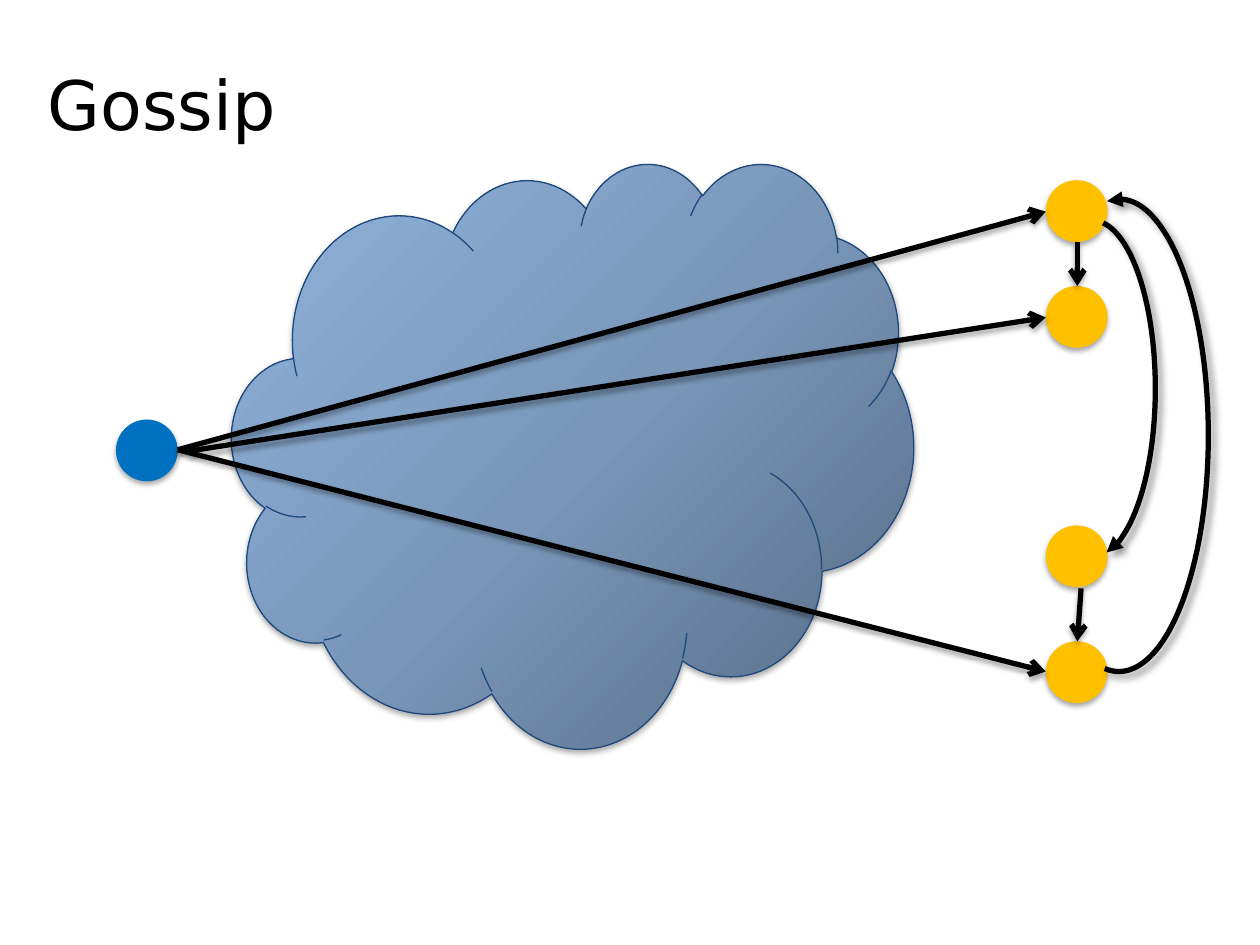
from dataclasses import dataclass

from copy import deepcopy
from lxml.etree import SubElement
from pptx import Presentation
from pptx.dml.color import RGBColor
from pptx.enum.shapes import MSO_CONNECTOR, MSO_SHAPE
from pptx.enum.text import MSO_ANCHOR
from pptx.oxml.ns import qn
from pptx.util import Inches, Pt

BLACK = RGBColor(0x00, 0x00, 0x00)
GOLD = RGBColor(0xFF, 0xC0, 0x00)
BLUE = RGBColor(0x00, 0x70, 0xC0)
NAVY = RGBColor(0x1F, 0x49, 0x7D)
SHADES = (
    (0, RGBColor(0x56, 0x6A, 0x83)),
    (0.5, RGBColor(0x7A, 0x97, 0xBA)),
    (1, RGBColor(0x90, 0xB3, 0xDC)),
)
SIZE = 0.49
PEER = 8.3
MID = 8.55


@dataclass
class Shade:
    alpha: int
    blur: float
    dist: float
    angle: int


@dataclass
class Node:
    left: float
    top: float
    color: RGBColor


@dataclass
class Link:
    start: tuple[float, float]
    end: tuple[float, float]


@dataclass
class Bend:
    box: tuple[float, float, float, float]
    start: float
    end: float
    tip: str


SOFT = Shade(35, 3.1, 1.8, 90)
DEEP = Shade(40, 4, 3, 45)

NODES = [Node(PEER, top, GOLD) for top in (1.43, 2.27, 4.17, 5.09)]
NODES.append(Node(0.92, 3.33, BLUE))

LINKS = (
    Link((1.41, 3.57), (PEER, 1.68)),
    Link((1.41, 3.57), (PEER, 5.33)),
    Link((8.58, 4.67), (MID, 5.09)),
    Link((1.5, 3.58), (PEER, 2.52)),
    Link((MID, 1.92), (MID, 2.27)),
)

BENDS = (
    Bend((8.17, 1.75, 1, 2.67), 273.75, 85.03, "tailEnd"),
    Bend((8.17, 1.58, 1.42, 3.75), 267.08, 93.47, "headEnd"),
)


def cast(item, shade: Shade) -> None:
    props = item._element.spPr
    effects = props.find(qn("a:effectLst"))
    if effects is None:
        effects = SubElement(props, qn("a:effectLst"))
    outer = SubElement(
        effects, qn("a:outerShdw"),
        blurRad=str(Pt(shade.blur)), dist=str(Pt(shade.dist)),
        dir=str(shade.angle * 60000), rotWithShape="0",
    )
    color = SubElement(outer, qn("a:srgbClr"), val=str(BLACK))
    SubElement(color, qn("a:alpha"), val=str(shade.alpha * 1000))


def stroke(item, tip: str, kind: str) -> None:
    item.line.color.rgb = BLACK
    item.line.width = Pt(3)
    line = item._element.spPr.find(qn("a:ln"))
    SubElement(line, qn(f"a:{tip}"), type=kind)


def add_form(slide, kind, box: tuple[float, float, float, float]):
    form = slide.shapes.add_shape(kind, *map(Inches, box))
    form.shadow.inherit = False
    return form


def draw_cloud(slide) -> None:
    cloud = add_form(slide, MSO_SHAPE.CLOUD, (1.84, 1.29, 5.41, 4.64))
    cloud.fill.gradient()
    cloud.fill.gradient_angle = 135
    stops = cloud._element.spPr.find(f".//{qn('a:gsLst')}")
    stops.append(deepcopy(stops[0]))
    for stop, (place, color) in zip(cloud.fill.gradient_stops, SHADES):
        stop.position = place
        stop.color.rgb = color
    cloud.line.color.rgb = NAVY
    cloud.line.width = Pt(0.75)
    cast(cloud, SOFT)


def draw_node(slide, node: Node) -> None:
    form = add_form(slide, MSO_SHAPE.OVAL, (node.left, node.top, SIZE, SIZE))
    form.fill.solid()
    form.fill.fore_color.rgb = node.color
    form.line.fill.background()
    cast(form, SOFT)


def draw_link(slide, link: Link) -> None:
    ends = map(Inches, (*link.start, *link.end))
    line = slide.shapes.add_connector(MSO_CONNECTOR.STRAIGHT, *ends)
    stroke(line, "tailEnd", "arrow")
    cast(line, SOFT)


def draw_bend(slide, bend: Bend) -> None:
    arc = add_form(slide, MSO_SHAPE.ARC, bend.box)
    for index, angle in enumerate((bend.start, bend.end)):
        arc.adjustments[index] = angle * 0.6
    arc.fill.background()
    stroke(arc, bend.tip, "triangle")
    cast(arc, DEEP)


def add_text(slide, text: str, *, box: tuple[float, float, float, float],
             size: float, font: str, color: RGBColor, space: float) -> None:
    frame = slide.shapes.add_textbox(*map(Inches, box)).text_frame
    frame.word_wrap = True
    frame.vertical_anchor = MSO_ANCHOR.TOP
    frame.margin_left = frame.margin_right = 0
    frame.margin_top = frame.margin_bottom = 0
    para = frame.paragraphs[0]
    para.line_spacing = space
    run = para.add_run()
    run.text = text
    run.font.size = Pt(size)
    run.font.name = font
    run.font.color.rgb = color


def main() -> None:
    deck = Presentation()
    deck.slide_width = Inches(10)
    deck.slide_height = Inches(7.5)
    slide = deck.slides.add_slide(deck.slide_layouts[6])
    draw_cloud(slide)
    add_text(slide, "Gossip", box=(0.38, 0.54, 9.52, 0.9), size=39,
             font="DejaVu Sans", color=BLACK, space=0.95)
    for node in NODES:
        draw_node(slide, node)
    for link in LINKS:
        draw_link(slide, link)
    for bend in BENDS:
        draw_bend(slide, bend)
    deck.save("out.pptx")


if __name__ == "__main__":
    main()
